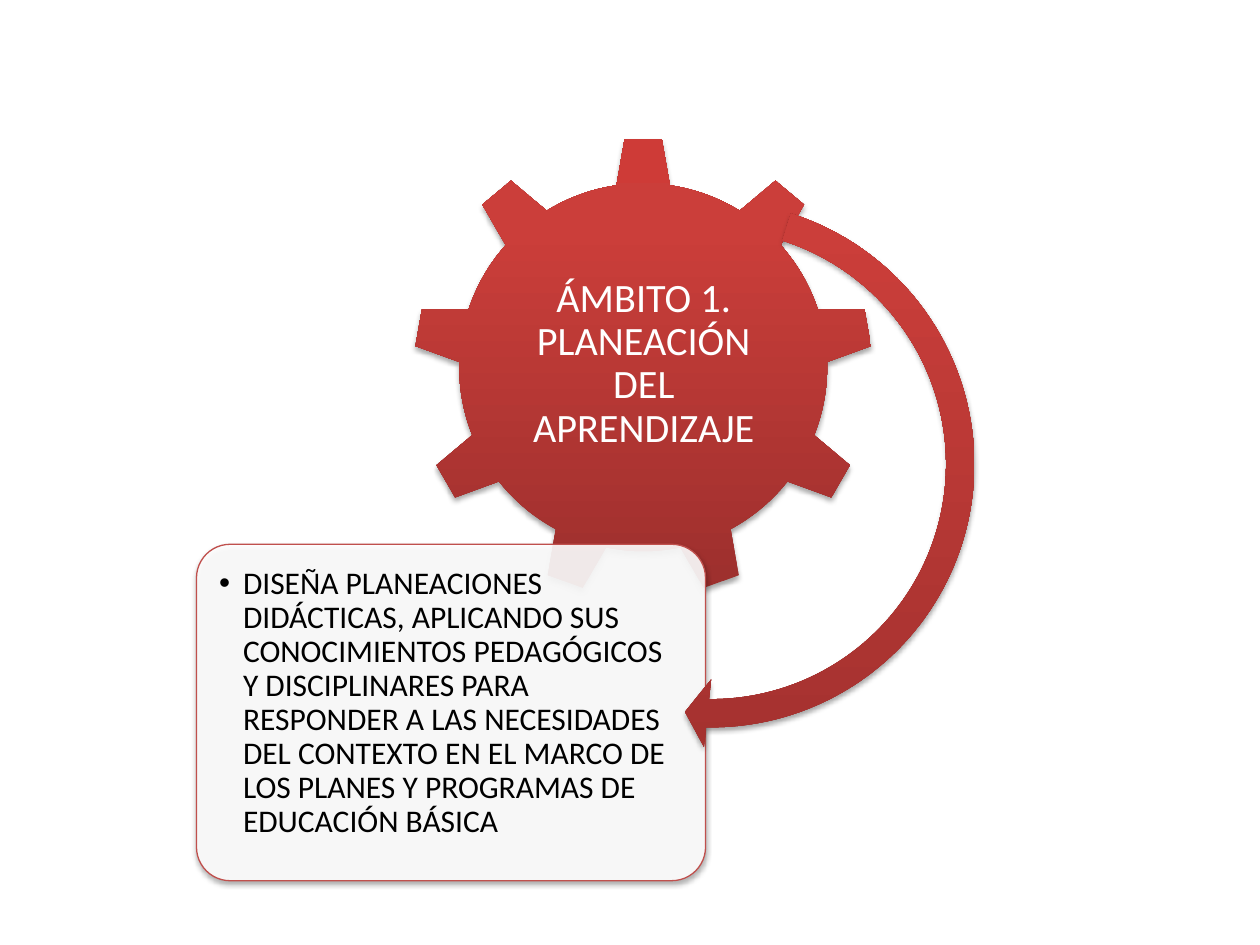
from pptx import Presentation
from pptx.dml.color import RGBColor as RGB
from pptx.enum.shapes import MSO_SHAPE as SHAPE
from pptx.enum.text import MSO_ANCHOR as ANCHOR, PP_ALIGN as ALIGN
from pptx.oxml import parse_xml
from pptx.oxml.ns import qn
from pptx.util import Inches, Pt
from lxml.etree import SubElement

COLORS = {"dark": "9C2F2D", "mid": "CB3E3A", "light": "CE3B37", "border": "C0504D",
          "white": "FFFFFF", "black": "000000"}
NS = 'xmlns:a="http://schemas.openxmlformats.org/drawingml/2006/main"'
STOPS = [(0, "dark"), (80, "mid"), (100, "light")]

prs = Presentation()
prs.slide_width, prs.slide_height = Inches(10), Inches(7.5)
COL, ROW = prs.slide_width / 100, prs.slide_height / 75
s = prs.slides.add_slide(prs.slide_layouts[6])


def add_shape(kind, col, row, cols, rows, adjustments=()):
    sp = s.shapes.add_shape(kind, int(col * COL), int(row * ROW), int(cols * COL), int(rows * ROW))
    for i, value in enumerate(adjustments):
        sp.adjustments[i] = value
    if kind == SHAPE.ROUNDED_RECTANGLE:
        sp.fill.solid()
        sp.fill.fore_color.rgb = RGB.from_string(COLORS["white"])
        color = sp._element.spPr.find(qn("a:solidFill"))[0]
        SubElement(color, qn("a:alpha"), val="90000")
        sp.line.color.rgb = RGB.from_string(COLORS["border"])
        sp.line.width = Pt(0.75)
    else:
        sp.fill.gradient()
        grad = sp._element.spPr.find(qn("a:gradFill"))
        stops = "".join(f'<a:gs pos="{pos * 1000}"><a:srgbClr val="{COLORS[name]}"/></a:gs>'
                        for pos, name in STOPS)
        grad.getparent().replace(grad, parse_xml(
            f'<a:gradFill {NS} rotWithShape="0"><a:gsLst>{stops}</a:gsLst>'
            '<a:lin ang="16200000" scaled="0"/></a:gradFill>'))
        sp.line.fill.background()
    sp.shadow.inherit = False
    sp._element.spPr.find(qn("a:effectLst")).append(parse_xml(
        f'<a:outerShdw {NS} blurRad="{Pt(3.1)}" dist="{Pt(1.8)}" dir="5400000" rotWithShape="0">'
        f'<a:srgbClr val="{COLORS["black"]}"><a:alpha val="35000"/></a:srgbClr></a:outerShdw>'))
    return sp


def add_text(text, col, row, cols, rows, inset, size, color, anchor, align, bullet=False):
    tb = s.shapes.add_textbox(int(col * COL), int(row * ROW), int(cols * COL), int(rows * ROW))
    tf = tb.text_frame
    tf.word_wrap, tf.vertical_anchor = True, anchor
    tf.margin_left = tf.margin_right = tf.margin_top = tf.margin_bottom = Inches(inset)
    p = tf.paragraphs[0]
    p.text, p.alignment, p.line_spacing = text, align, 0.9
    if bullet:
        pPr = p._p.get_or_add_pPr()
        pPr.set("marL", str(Inches(0.19)))
        pPr.set("indent", str(Inches(-0.19)))
        SubElement(pPr, qn("a:buFont"), typeface="Arial")
        SubElement(pPr, qn("a:buChar"), char="•")
    font = p.runs[0].font
    font.name, font.size = "Calibri", Pt(size)
    font.color.rgb = RGB.from_string(COLORS[color])


add_shape(SHAPE.GEAR_9, 32.8, 10.9, 36.5, 36.5)
add_text("ÁMBITO 1. PLANEACIÓN DEL APRENDIZAJE", 40.2, 19.5, 21.8, 18.8,
         0.03, 23, "white", ANCHOR.MIDDLE, ALIGN.CENTER)

add_shape(SHAPE.ROUNDED_RECTANGLE, 15.6, 43.2, 40.4, 26.7, [0.1])
add_text("DISEÑA PLANEACIONES DIDÁCTICAS, APLICANDO SUS CONOCIMIENTOS PEDAGÓGICOS Y "
         "DISCIPLINARES PARA RESPONDER A LAS NECESIDADES DEL CONTEXTO EN EL MARCO DE "
         "LOS PLANES Y PROGRAMAS DE EDUCACIÓN BÁSICA", 16.4, 44, 38.9, 25.1,
         0.1, 18, "black", ANCHOR.TOP, ALIGN.LEFT, bullet=True)

arrow = add_shape(SHAPE.CIRCULAR_ARROW, 34, 14.4, 44.9, 44.9, [0.05, 3.13, 32.61, 150.68, 0.06])
arrow.rotation = 36.5

prs.save("out.pptx")
